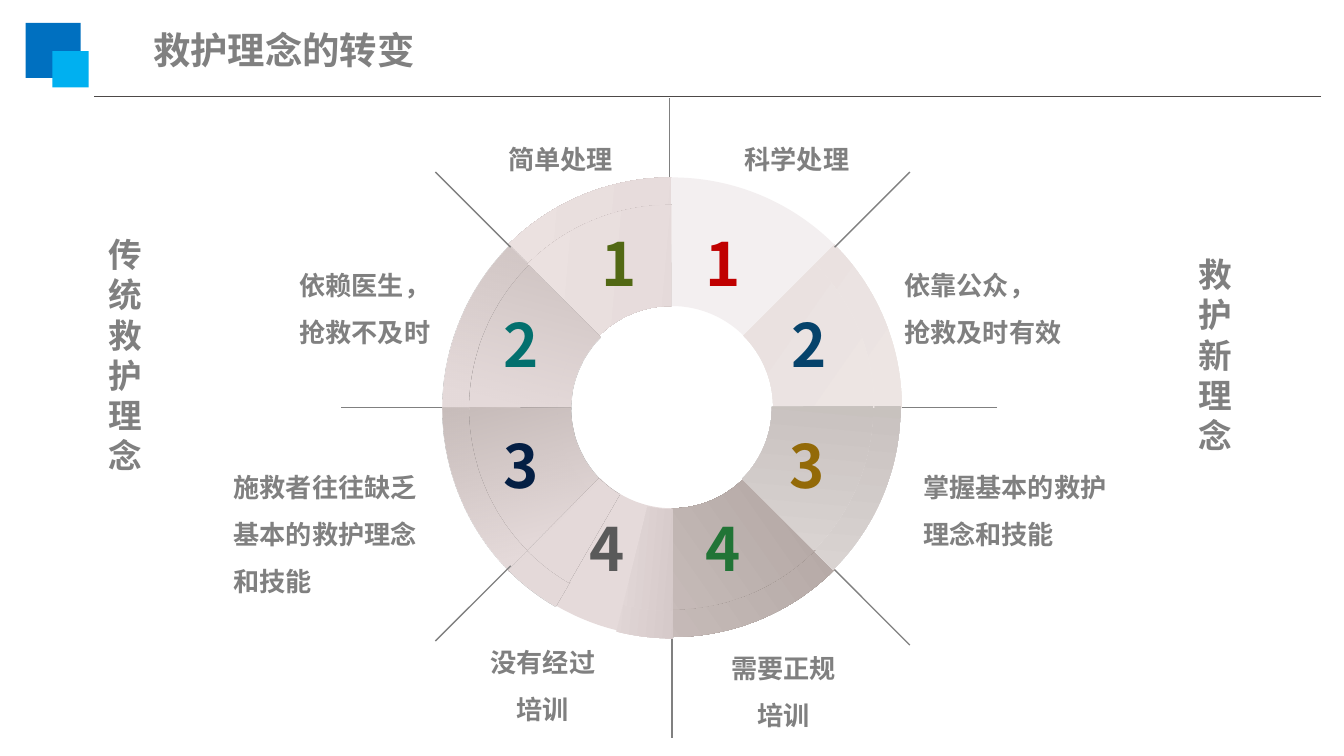
from lxml import etree
from pptx import Presentation
from pptx import util as u
from pptx.dml.color import RGBColor
from pptx.enum import shapes, text
from pptx.oxml.ns import qn

FONT = "Noto Sans CJK SC"
COLORS = {"blue": "0070C0", "sky": "00B0F0", "rule": "4D4948", "gray": "808080",
          "pale": "F3EFF0", "rose": "E5DADA"}
LEFT, CENTER = text.PP_ALIGN.LEFT, text.PP_ALIGN.CENTER

SQUARES = [(0.19, 0.17, 0.41, "blue"), (0.39, 0.38, 0.27, "sky")]
RULE = (9.83, 0.72, 0.7, 0.72)
SPOKES = [(6.18, 4.21, 6.77, 4.8), (3.32, 3.03, 2.54, 3.03), (5, 5.49, 5, 4.7),
          (4.98, 1.36, 4.98, 0.73), (7.42, 3.03, 6.63, 3.03)]
DIAGONALS = [(3.8, 1.84, 3.24, 1.28), (6.21, 1.84, 6.77, 1.28), (3.8, 4.21, 3.24, 4.77)]

RING_SIZES = [3.42, 3.01]
FULL, LOWER, UPPER = (108, 135.12), (126.62, 135.12), (108, 116.91)
# center x, center y, rotation, flips, span, gradient stops or color, gradient angle
ARCS = [
    (4.99, 3.03, 45, "", FULL, [(0, "AEA39F"), (45, "E5DADA"), (100, "F0E8E6")], 140),
    (5, 3.03, 315, "H", FULL, "pale", None),
    (5, 3.03, 45, "HV", FULL, [(0, "8D827C"), (100, "E6DADA")], 280),
    (5, 3.03, 315, "V", FULL, "rose", None),
    (5, 3.03, 315, "HV", FULL, [(0, "F3EEEB"), (71, "E5DADA"), (100, "CCC7C4")], 80),
    (4.99, 3.03, 225, "V", FULL, [(0, "EFE9E9"), (100, "A59E98")], 310),
    (5, 3.04, 45, "V", FULL, [(0, "EAE0DE", 84), (45, "E5DADA"), (100, "AEA39F")], 120),
    (5, 3.04, 135, "HV", FULL, [(0, "8A7F79"), (63, "E5DADA"), (100, "DED4D3", 84)], 120),
    (5, 3.04, 315, "V", LOWER, [(0, "E5DADA"), (42, "E5DADA"), (100, "8A7C79")], 310),
    (4.99, 3.03, 315, "V", UPPER, [(0, "E5DADA"), (54, "E5DADA"), (100, "8A7C79", 84)], 90),
]

NUMBERS = [
    ("1", 5.15, 1.64, [(40, "C00000"), (100, "FF0000")]),
    ("2", 5.79, 2.24, [(0, "06436B"), (100, "0B87D6")]),
    ("3", 5.78, 3.14, [(0, "936A08"), (100, "F9D98C")]),
    ("4", 5.15, 3.76, [(0, "217436"), (100, "32AE51")]),
    ("4", 4.29, 3.76, [(0, "595959"), (100, "808080")]),
    ("3", 3.65, 3.14, [(0, "041F44"), (100, "052E65")]),
    ("2", 3.65, 2.24, [(0, "03706E"), (100, "04A8A4")]),
    ("1", 4.38, 1.64, [(0, "526814"), (100, "7C9C1E")]),
]
LABELS = [
    (["依赖医生，抢救不及时"], (2.13, 1.84, 1.2, 0.81), LEFT),
    (["依靠公众，", "抢救及时有效"], (6.63, 1.84, 1.51, 0.81), LEFT),
    (["简单处理"], (3.57, 0.9, 1.2, 0.45), CENTER),
    (["科学处理"], (5.33, 0.9, 1.2, 0.45), CENTER),
    (["没有经过", "培训"], (3.44, 4.64, 1.2, 0.81), CENTER),
    (["需要正规", "培训"], (5.23, 4.69, 1.2, 0.81), CENTER),
    (["施救者往往缺乏基本的救护理念和技能"], (1.64, 3.34, 1.69, 1.16), LEFT),
    (["掌握基本的救护理念和技能"], (6.77, 3.34, 1.69, 0.81), LEFT),
]
HEADINGS = [
    (["救护理念的转变"], (1.04, 0.15, 2.61, 0.43), 20),
    (["传统救护理念"], (0.71, 1.69, 0.51, 1.92), 18),
    (["救护", "新理念"], (8.82, 1.84, 0.51, 1.61), 18),
]


def inches(values):
    return [u.Inches(value) for value in values]


def rgb(name):
    return RGBColor.from_string(COLORS[name])


def paint_gradient(fill, holder, stops, angle):
    fill.gradient()
    gradient = holder.find(qn("a:gradFill"))
    stop_list = gradient.find(qn("a:gsLst"))
    for old in list(stop_list):
        stop_list.remove(old)
    for position, color, *alpha in stops:
        stop = etree.SubElement(stop_list, qn("a:gs"), pos=str(position * 1000))
        tint = etree.SubElement(stop, qn("a:srgbClr"), val=color)
        if alpha:
            etree.SubElement(tint, qn("a:alpha"), val=str(alpha[0] * 1000))
    gradient.find(qn("a:lin")).set("ang", str(angle * 60000))


def add_filled(parent, kind, place):
    shape = parent.add_shape(kind, *inches(place))
    shape.shadow.inherit = False
    shape.line.fill.background()
    return shape


def add_line(slide, ends, color):
    line = slide.shapes.add_connector(shapes.MSO_CONNECTOR.STRAIGHT, *inches(ends))
    line.line.color.rgb = rgb(color)
    line.line.width = u.Pt(0.75)
    etree.SubElement(line._element.spPr, qn("a:effectLst"))


def add_ring(slide, size):
    ring = slide.shapes.add_group_shape()
    for x, y, rotation, flips, span, paint, angle in ARCS:
        place = (x - size / 2, y - size / 2, size, size)
        arc = add_filled(ring.shapes, shapes.MSO_SHAPE.BLOCK_ARC, place)
        for index, value in enumerate((*span, 0.25)):
            arc.adjustments[index] = value
        arc.rotation = rotation
        for axis in flips:
            arc._element.spPr.find(qn("a:xfrm")).set("flip" + axis, "1")
        if angle is None:
            arc.fill.solid()
            arc.fill.fore_color.rgb = rgb(paint)
        else:
            paint_gradient(arc.fill, arc._element.spPr, paint, angle)


def add_text(slide, lines, place, size, align=LEFT, spacing=None, stops=None):
    box = slide.shapes.add_textbox(*inches(place))
    frame = box.text_frame
    frame.word_wrap = stops is None
    for index, line in enumerate(lines):
        para = frame.add_paragraph() if index else frame.paragraphs[0]
        para.alignment = align
        para.line_spacing = spacing
        span = para.add_run()
        span.text = line
        span.font.size = u.Pt(size)
        span.font.bold = True
        span.font.name = FONT
        properties = span.font._element
        properties.find(qn("a:latin")).addnext(
            properties.makeelement(qn("a:ea"), {"typeface": FONT}))
        if stops:
            paint_gradient(span.font.fill, properties, stops, 90)
        else:
            span.font.color.rgb = rgb("gray")


def main():
    deck = Presentation()
    deck.slide_width = u.Inches(10)
    deck.slide_height = deck.slide_width * 9 // 16
    page = deck.slides.add_slide(deck.slide_layouts[6])
    for left, top, side, color in SQUARES:
        square = add_filled(page.shapes, shapes.MSO_SHAPE.RECTANGLE, (left, top, side, side))
        square.fill.solid()
        square.fill.fore_color.rgb = rgb(color)
    add_line(page, RULE, "rule")
    for ends in SPOKES:
        add_line(page, ends, "gray")
    for size in RING_SIZES:
        add_ring(page, size)
    for number, left, top, stops in NUMBERS:
        add_text(page, [number], (left, top, 0.47, 0.64), 32, stops=stops)
    for ends in DIAGONALS:
        add_line(page, ends, "gray")
    for lines, place, align in LABELS:
        add_text(page, lines, place, 14, align, 1.5)
    for lines, place, size in HEADINGS:
        add_text(page, lines, place, size)
    deck.save("out.pptx")


if __name__ == "__main__":
    main()
